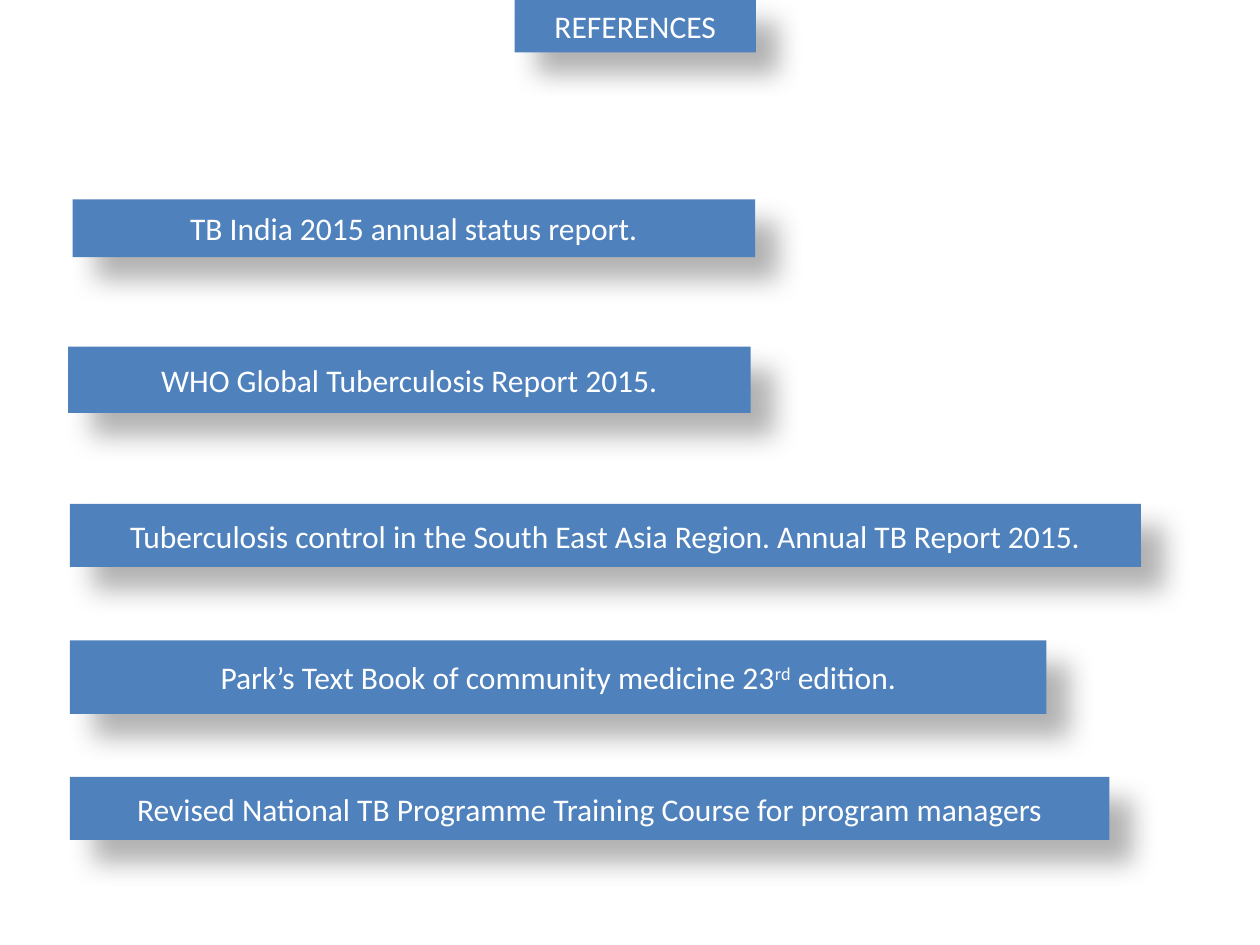
from dataclasses import dataclass

from lxml import etree
from pptx import Presentation
from pptx.dml.color import RGBColor
from pptx.enum.shapes import MSO_SHAPE
from pptx.enum.text import MSO_ANCHOR, PP_ALIGN
from pptx.oxml.ns import qn
from pptx.shapes.autoshape import Shape
from pptx.util import Pt

RECT = MSO_SHAPE.RECTANGLE
MIDDLE = MSO_ANCHOR.MIDDLE
CENTER = PP_ALIGN.CENTER
TITLE_ONLY = 5


@dataclass(frozen=True)
class Theme:
    fill: RGBColor = RGBColor(0x4F, 0x81, 0xBD)
    text: RGBColor = RGBColor(0xFF, 0xFF, 0xFF)
    shade: str = "000000"
    font: str = "Calibri"
    size: int = 18


@dataclass(frozen=True)
class Bar:
    """A box in points; every second one of its words runs is superscript."""
    left: float
    top: float
    width: float
    height: float
    words: tuple[str, ...]


THEME = Theme()
FONT = {"name": THEME.font, "size": Pt(THEME.size), "bold": False}
SHADOW = {"blurRad": Pt(15), "dist": Pt(18), "dir": 45 * 60000,
          "algn": "tl", "rotWithShape": 0}

TITLE = Bar(294, 0, 138, 30, ("REFERENCES",))
BARS = (
    Bar(41.5, 114, 390, 33, ("TB India 2015 annual status report.",)),
    Bar(39, 198, 390, 38, ("WHO Global Tuberculosis Report 2015.",)),
    Bar(40, 288, 612, 36, ("Tuberculosis control in the South East Asia "
                           "Region. Annual TB Report 2015.",)),
    Bar(40, 366, 558, 42, ("Park’s Text Book of community medicine 23",
                           "rd", " edition.")),
    Bar(40, 444, 594, 36, ("Revised National TB Programme Training Course "
                           "for program managers",)),
)


def cast_shadow(shape: Shape) -> None:
    shape.shadow.inherit = False
    effects = shape.element.spPr.find(qn("a:effectLst"))
    outer = etree.SubElement(effects, qn("a:outerShdw"))
    for key, value in SHADOW.items():
        outer.set(key, str(value))
    color = etree.SubElement(outer, qn("a:srgbClr"), val=THEME.shade)
    etree.SubElement(color, qn("a:alpha"), val="30000")


def write(shape: Shape, words: tuple[str, ...]) -> None:
    frame = shape.text_frame
    frame.word_wrap = True
    frame.vertical_anchor = MIDDLE
    para = frame.paragraphs[0]
    para.alignment = CENTER
    for index, text in enumerate(words):
        run = para.add_run()
        run.text = text
        for key, value in FONT.items():
            setattr(run.font, key, value)
        run.font.color.rgb = THEME.text
        if index % 2:
            run._r.get_or_add_rPr().set("baseline", "30000")


def dress(shape: Shape, bar: Bar) -> None:
    """Give a shape the place, look and text of a bar."""
    for key in ("left", "top", "width", "height"):
        setattr(shape, key, Pt(getattr(bar, key)))
    shape.fill.solid()
    shape.fill.fore_color.rgb = THEME.fill
    shape.line.fill.background()
    cast_shadow(shape)
    write(shape, bar.words)


def main() -> None:
    deck = Presentation()
    deck.slide_width, deck.slide_height = Pt(720), Pt(540)
    slide = deck.slides.add_slide(deck.slide_layouts[TITLE_ONLY])
    dress(slide.shapes.title, TITLE)
    for bar in BARS:
        dress(slide.shapes.add_shape(RECT, 0, 0, 0, 0), bar)
    deck.save("out.pptx")


if __name__ == "__main__":
    main()
